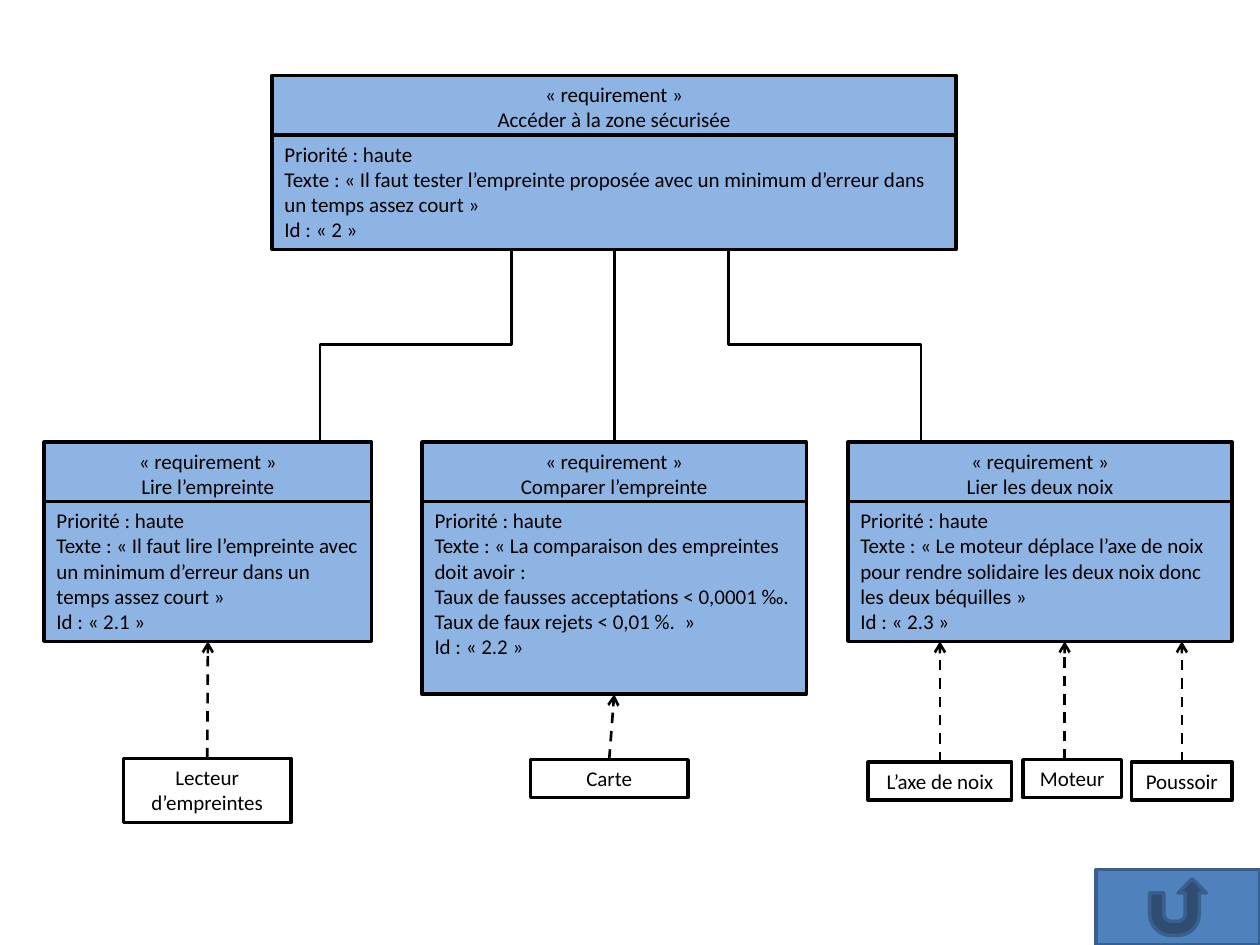
import pptx
import pptx.dml.color
import pptx.enum.dml
import pptx.enum.shapes
import pptx.enum.text
import pptx.oxml
import pptx.oxml.ns
import pptx.util
from pptx.util import Inches

BLACK = pptx.dml.color.RGBColor(0x00, 0x00, 0x00)
REQUIREMENT_BLUE = pptx.dml.color.RGBColor(0x8E, 0xB4, 0xE3)
BUTTON_BLUE = pptx.dml.color.RGBColor(0x4F, 0x81, 0xBD)
BUTTON_LINE = pptx.dml.color.RGBColor(0x3A, 0x5F, 0x8C)
FONT_NAME = "Calibri"
CENTER = pptx.enum.text.PP_ALIGN.CENTER
LEFT = pptx.enum.text.PP_ALIGN.LEFT
SHAPES = pptx.enum.shapes.MSO_SHAPE
CONNECTORS = pptx.enum.shapes.MSO_CONNECTOR
TOP_SITE, BOTTOM_SITE = 0, 2
HEADER_STEP = 0.47
CHILD_TOP = 3.51


def add_box(slide, box, lines, alignment, fill=None):
    """Add an outlined rectangle with one paragraph for each line."""
    shape = slide.shapes.add_shape(SHAPES.RECTANGLE, *map(Inches, box))
    shape.shadow.inherit = False
    if fill is None:
        shape.fill.background()
    else:
        shape.fill.solid()
        shape.fill.fore_color.rgb = fill
    shape.line.color.rgb = BLACK
    shape.line.width = pptx.util.Pt(2)
    frame = shape.text_frame
    frame.word_wrap = True
    frame.vertical_anchor = pptx.enum.text.MSO_ANCHOR.TOP
    for index, line in enumerate(lines):
        paragraph = frame.add_paragraph() if index else frame.paragraphs[0]
        paragraph.alignment = alignment
        run = paragraph.add_run()
        run.text = line
        run.font.name = FONT_NAME
        run.font.size = pptx.util.Pt(12)
        run.font.color.rgb = BLACK
    return shape


def add_requirement(slide, box, name, texts, identifier):
    """Add a requirement block and return its header and body."""
    left, top, width, height = box
    header = add_box(slide, (left, top, width, 0.51),
                     ["« requirement »", name], CENTER, REQUIREMENT_BLUE)
    lines = ["Priorité : haute", *texts, f"Id : « {identifier} »"]
    body = add_box(slide, (left, top + HEADER_STEP, width, height - HEADER_STEP),
                   lines, LEFT, REQUIREMENT_BLUE)
    return header, body


def add_line(slide, kind, begin, end):
    """Add a plain black connector between two points."""
    connector = slide.shapes.add_connector(kind, *map(Inches, (*begin, *end)))
    connector.line.color.rgb = BLACK
    connector.line.width = pptx.util.Pt(1.5)
    properties = connector._element.spPr
    properties.append(pptx.oxml.parse_xml(
        f"<a:effectLst {pptx.oxml.ns.nsdecls('a')}/>"))
    return connector


def add_branch(slide, box, toward_left):
    """Add an elbow that leaves downward and ends downward, filling the box."""
    left, top, width, height = box
    inner_left = left + (width - height) / 2
    inner_top = top + (height - width) / 2
    start, finish = inner_left, inner_left + height
    if not toward_left:
        start, finish = finish, start
    connector = add_line(slide, CONNECTORS.ELBOW,
                         (start, inner_top), (finish, inner_top + width))
    connector._element.spPr.xfrm.set("rot", str((90 if toward_left else 270) * 60000))


def add_component(slide, box, lines, target, target_bottom,
                  join_target=False, arrow_x=None):
    """Add a component box and its dashed arrow up to a requirement body."""
    left, top, width, height = box
    shape = add_box(slide, box, lines, CENTER)
    x = left + width / 2 if arrow_x is None else arrow_x
    arrow = add_line(slide, CONNECTORS.STRAIGHT, (x, top), (x, target_bottom))
    if arrow_x is None:
        arrow.begin_connect(shape, TOP_SITE)
    if join_target:
        arrow.end_connect(target, BOTTOM_SITE)
    arrow.line.dash_style = pptx.enum.dml.MSO_LINE.DASH
    arrow.line._get_or_add_ln().append(pptx.oxml.parse_xml(
        f"<a:tailEnd {pptx.oxml.ns.nsdecls('a')} type='arrow'/>"))


def add_return_button(slide, box):
    """Add the return button."""
    button = slide.shapes.add_shape(SHAPES.ACTION_BUTTON_RETURN, *map(Inches, box))
    button.shadow.inherit = False
    button.fill.solid()
    button.fill.fore_color.rgb = BUTTON_BLUE
    button.line.color.rgb = BUTTON_LINE
    button.line.width = pptx.util.Pt(2)


def build_diagram(slide):
    """Place the requirement tree and its components."""
    add_branch(slide, (2.54, 1.95, 1.52, 1.57), True)
    add_branch(slide, (5.78, 1.95, 1.53, 1.57), False)
    _, access = add_requirement(
        slide, (2.16, 0.6, 5.43, 1.38), "Accéder à la zone sécurisée",
        ["Texte : « Il faut tester l’empreinte proposée avec un minimum "
         "d’erreur dans un temps assez court »"], "2")
    _, read = add_requirement(
        slide, (0.35, CHILD_TOP, 2.6, 1.58), "Lire l’empreinte",
        ["Texte : « Il faut lire l’empreinte avec un minimum d’erreur "
         "dans un temps assez court »"], "2.1")
    compare_header, compare = add_requirement(
        slide, (3.35, CHILD_TOP, 3.05, 2), "Comparer l’empreinte",
        ["Texte : « La comparaison des empreintes doit avoir :",
         "Taux de fausses acceptations < 0,0001 ‰.",
         "Taux de faux rejets < 0,01 %.  »"], "2.2")
    _, link = add_requirement(
        slide, (6.73, CHILD_TOP, 3.05, 1.58), "Lier les deux noix",
        ["Texte : « Le moteur déplace l’axe de noix pour rendre solidaire "
         "les deux noix donc les deux béquilles »"], "2.3")
    trunk = add_line(slide, CONNECTORS.STRAIGHT, (4.87, CHILD_TOP), (4.88, 1.98))
    trunk.begin_connect(compare_header, TOP_SITE)
    trunk.end_connect(access, BOTTOM_SITE)

    add_component(slide, (0.98, 6.02, 1.33, 0.51), ["Lecteur d’empreintes"],
                  read, 5.09, join_target=True)
    add_component(slide, (4.21, 6.03, 1.25, 0.3), ["Carte"],
                  compare, 5.51, join_target=True)
    add_component(slide, (6.89, 6.05, 1.14, 0.3), ["L’axe de noix"], link, 5.09)
    add_component(slide, (8.12, 6.03, 0.78, 0.3), ["Moteur"], link, 5.09, arrow_x=8.45)
    add_component(slide, (8.98, 6.05, 0.8, 0.3), ["Poussoir"], link, 5.09)


def main():
    """Build and save the presentation."""
    presentation = pptx.Presentation()
    presentation.slide_width = Inches(10)
    presentation.slide_height = Inches(7.5)
    slide = presentation.slides.add_slide(presentation.slide_layouts[6])
    build_diagram(slide)
    add_return_button(slide, (8.7, 6.9, 1.3, 0.6))
    presentation.save("out.pptx")


if __name__ == "__main__":
    main()
